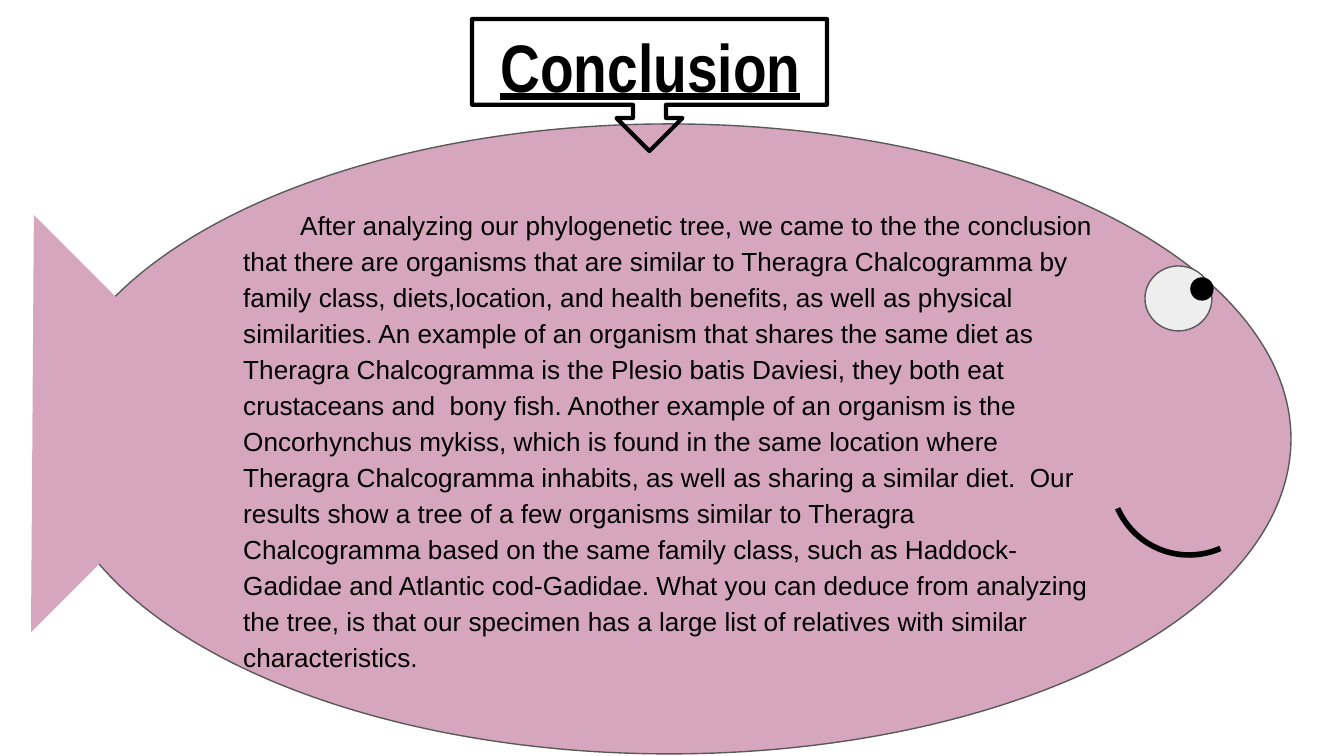
from dataclasses import dataclass
from typing import Optional

import pptx
import pptx.dml.color
import pptx.enum.shapes
import pptx.enum.text
import pptx.util

EMU_PER_PX = 914400 / 134.4
PRESET = pptx.enum.shapes.MSO_SHAPE
ALIGN = pptx.enum.text.PP_ALIGN
ANCHOR = pptx.enum.text.MSO_ANCHOR

COLORS = {
    "pink": "D5A6BD",
    "outline": "595959",
    "eye": "EEEEEE",
    "black": "000000",
}

# One run per sentence
CONCLUSION = (
    "After analyzing our phylogenetic tree, we came to the the conclusion that "
    "there are organisms that are similar to Theragra Chalcogramma by family "
    "class, diets,location, and health benefits, as well as physical "
    "similarities. ",
    "An example of an organism that shares the same diet as Theragra "
    "Chalcogramma is the Plesio batis Daviesi, they both eat crustaceans and  "
    "bony fish. ",
    "Another example of an organism is the Oncorhynchus mykiss, which is found "
    "in the same location where Theragra Chalcogramma inhabits, as well as "
    "sharing a similar diet.  ",
    "Our results show a tree of a few organisms similar to Theragra "
    "Chalcogramma based on the same family class, such as Haddock-Gadidae and "
    "Atlantic cod-Gadidae. ",
    "What you can deduce from analyzing the tree, is that our specimen has a "
    "large list of relatives with similar characteristics.",
)


@dataclass(frozen=True)
class Part:
    preset: PRESET
    box: tuple[int, int, int, int]  # left, top, width, height in px
    fill: Optional[str] = None
    line: Optional[str] = None
    weight: float = 0.75
    rotation: float = 0
    adjustments: tuple[float, ...] = ()


BODY = Part(PRESET.OVAL, (48, 124, 1243, 630), "pink", "outline")
TAIL = Part(PRESET.DIAGONAL_STRIPE, (-116, 277, 297, 293), "pink",
            rotation=135, adjustments=(0.5,))
EYE = Part(PRESET.OVAL, (1145, 266, 67, 65), "eye", "outline")
PUPIL = Part(PRESET.OVAL, (1191, 278, 22, 22), "black", "black")
SMILE = Part(PRESET.ARC, (1111, 399, 156, 156), line="black", weight=3,
             rotation=156.3)
TITLE_FRAME = Part(PRESET.DOWN_ARROW_CALLOUT, (472, 19, 355, 132), line="black",
                   weight=2.25, adjustments=(0.25, 0.25, 0.25, 0.65))


def px(length: int) -> pptx.util.Emu:
    return pptx.util.Emu(round(length * EMU_PER_PX))


def rgb(name: str) -> pptx.dml.color.RGBColor:
    return pptx.dml.color.RGBColor.from_string(COLORS[name])


def draw_part(slide, part: Part):
    shape = slide.shapes.add_shape(part.preset, *map(px, part.box))
    shape.shadow.inherit = False
    shape.rotation = part.rotation
    for index, value in enumerate(part.adjustments):
        shape.adjustments[index] = value
    if part.fill:
        shape.fill.solid()
        shape.fill.fore_color.rgb = rgb(part.fill)
    else:
        shape.fill.background()
    if part.line:
        shape.line.color.rgb = rgb(part.line)
        shape.line.width = pptx.util.Pt(part.weight)
    else:
        shape.line.fill.background()
    return shape


def write_text(shape, texts: tuple[str, ...], font: str, size: int,
               align: ALIGN, anchor: ANCHOR, emphasis: bool = False):
    frame = shape.text_frame
    frame.word_wrap = True
    frame.vertical_anchor = anchor
    frame.margin_left = frame.margin_right = pptx.util.Inches(0.1)
    frame.margin_top = frame.margin_bottom = pptx.util.Inches(0.1)
    paragraph = frame.paragraphs[0]
    paragraph.alignment = align
    for text in texts:
        run = paragraph.add_run()
        run.text = text
        run.font.name = font
        run.font.size = pptx.util.Pt(size)
        run.font.bold = run.font.underline = emphasis
        run.font.color.rgb = rgb("black")
    return paragraph


def main() -> None:
    deck = pptx.Presentation()
    deck.slide_width, deck.slide_height = px(1344), px(756)
    slide = deck.slides.add_slide(deck.slide_layouts[6])

    # Title
    title = slide.shapes.add_textbox(*map(px, (24, 12, 1253, 85)))
    write_text(title, ("Conclusion",), "Arial Narrow", 36, ALIGN.CENTER,
               ANCHOR.TOP, emphasis=True)

    # Fish body with the conclusion
    body = draw_part(slide, BODY)
    conclusion = write_text(body, CONCLUSION, "Arial", 14, ALIGN.LEFT,
                            ANCHOR.MIDDLE)
    conclusion.line_spacing = 1.15
    conclusion._p.get_or_add_pPr().set("indent", str(px(57)))

    # Tail, face and the callout around the title
    for part in (TAIL, EYE, PUPIL, SMILE, TITLE_FRAME):
        draw_part(slide, part)

    deck.save("out.pptx")


if __name__ == "__main__":
    main()
